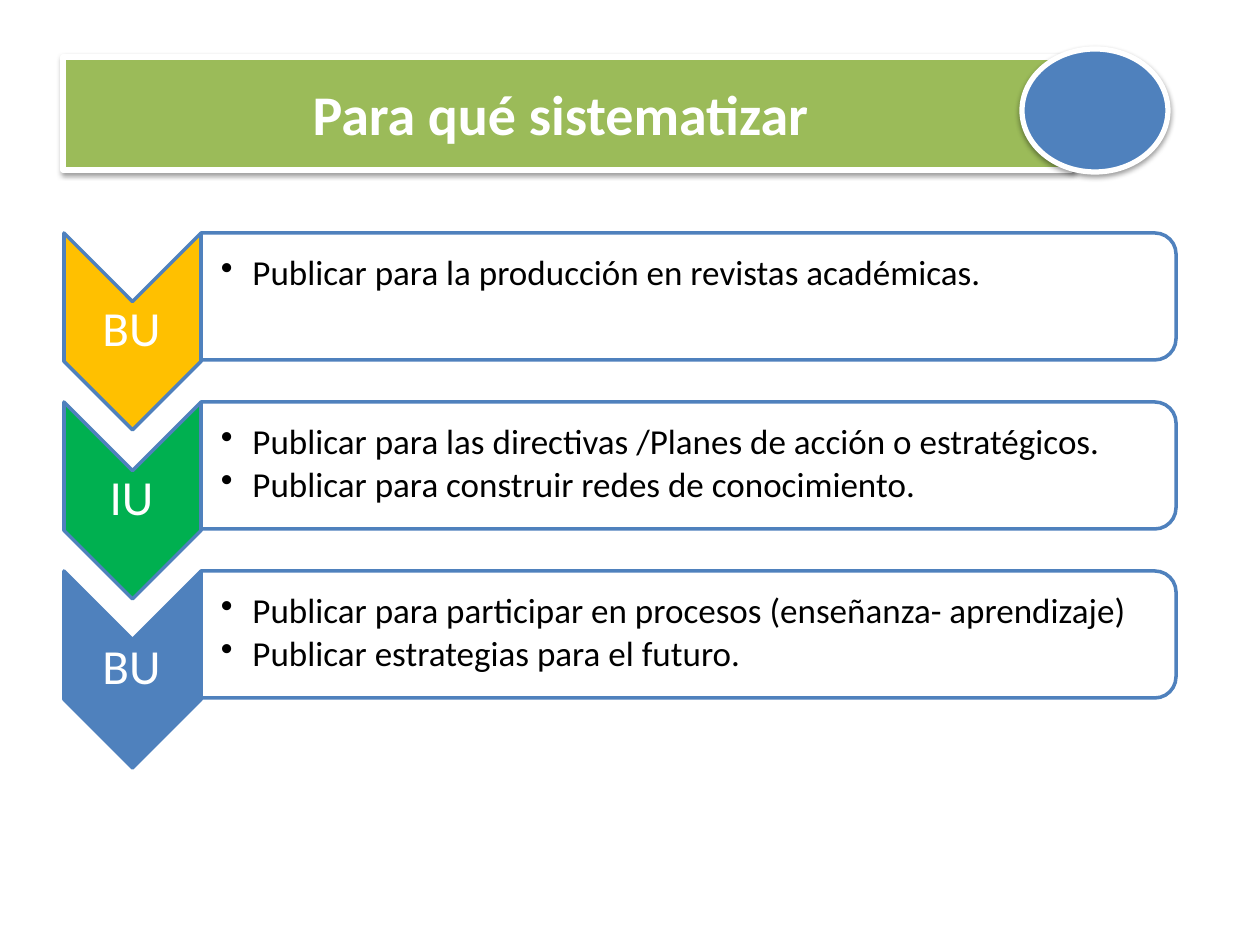
from lxml.etree import SubElement as Sub
from pptx import Presentation
from pptx.dml.color import RGBColor
from pptx.enum.shapes import MSO_SHAPE as Kind
from pptx.enum.text import MSO_ANCHOR as Anchor, PP_ALIGN as Align
from pptx.oxml import parse_xml
from pptx.oxml.ns import nsdecls, qn
from pptx.util import Pt

PX = 914400 / 126
BLUE, WHITE = "4F81BD", "FFFFFF"


def shape(kind, box, fill, line, width, turn=0):
    item = slide.shapes.add_shape(kind, *[round(n * PX) for n in box])
    item.shadow.inherit = False
    item.rotation = turn
    item.fill.solid()
    item.fill.fore_color.rgb = RGBColor.from_string(fill)
    item.line.color.rgb = RGBColor.from_string(line)
    item.line.width = Pt(width)
    return item


def write(frame, lines, size, color, pads, bold=False):
    frame.word_wrap = True
    frame.vertical_anchor = Anchor.MIDDLE
    (frame.margin_left, frame.margin_top,
     frame.margin_right, frame.margin_bottom) = [round(n * PX) for n in pads]
    for i, text in enumerate(lines):
        par = frame.paragraphs[0] if i == 0 else frame.add_paragraph()
        par.text = text
        par.alignment = Align.CENTER
        par.font.name = "Calibri"
        par.font.size = Pt(size)
        par.font.bold = bold
        par.font.color.rgb = RGBColor.from_string(color)


deck = Presentation()
deck.slide_width, deck.slide_height = round(1260 * PX), round(945 * PX)
slide = deck.slides.add_slide(deck.slide_layouts[6])

# Rows: chevron with label, rounded panel with bullets
rows = [
    ("BU", "FFC000", ["Publicar para la producción en revistas académicas."]),
    ("IU", "00B050", [
        "Publicar para las directivas /Planes de acción o estratégicos.",
        "Publicar para construir redes de conocimiento."]),
    ("BU", BLUE, [
        "Publicar para participar en procesos (enseñanza- aprendizaje)",
        "Publicar estrategias para el futuro."]),
]
for i, (label, color, lines) in enumerate(rows):
    y = 233 + 169 * i
    shape(Kind.CHEVRON, (34, y + 30, 197, 137), color, BLUE, 2, 90)
    tag = slide.shapes.add_textbox(
        *[round(n * PX) for n in (63, y + 68, 137, 59)])
    write(tag.text_frame, [label], 28, WHITE, (2, 2, 2, 2))
    tag.text_frame.paragraphs[0].line_spacing = 0.9

    panel = shape(Kind.ROUND_2_SAME_RECTANGLE, (625, y - 424, 127, 975),
                  WHITE, BLUE, 2, 90)
    tint = panel.fill._xPr.find(qn("a:solidFill"))[0]
    Sub(tint, qn("a:alpha"), val="90000")

    body = slide.shapes.add_textbox(
        *[round(n * PX) for n in (201, y + 6, 969, 115)])
    frame = body.text_frame
    write(frame, lines, 20, "000000", (20, 16, 1, 1))
    frame.vertical_anchor = Anchor.TOP
    for par in frame.paragraphs:
        par.alignment = Align.LEFT
        par.line_spacing = 0.9
        par.space_after = Pt(3)
        props = par._p.get_or_add_pPr()
        props.set("marL", "228600")
        props.set("indent", "-228600")
        # The bullet goes before the font defaults
        mark = parse_xml(f'<a:buChar {nsdecls("a")} char="•"/>')
        props.insert(list(props).index(props.find(qn("a:defRPr"))), mark)

# Title bar and disc
bar = shape(Kind.RECTANGLE, (63, 57, 1008, 113), "9BBB59", WHITE, 3)
write(bar.text_frame, ["Para qué sistematizar "], 32, WHITE,
      (13, 6, 13, 6), True)
disc = shape(Kind.OVAL, (1022, 49, 146, 123), BLUE, WHITE, 3)
for item in (bar, disc):
    glow = item._element.spPr.find(qn("a:effectLst"))
    shade = Sub(glow, qn("a:outerShdw"), blurRad="40000", dist="20000",
                dir="5400000", rotWithShape="0")
    tone = Sub(shade, qn("a:srgbClr"), val="000000")
    Sub(tone, qn("a:alpha"), val="38000")

deck.save("out.pptx")
